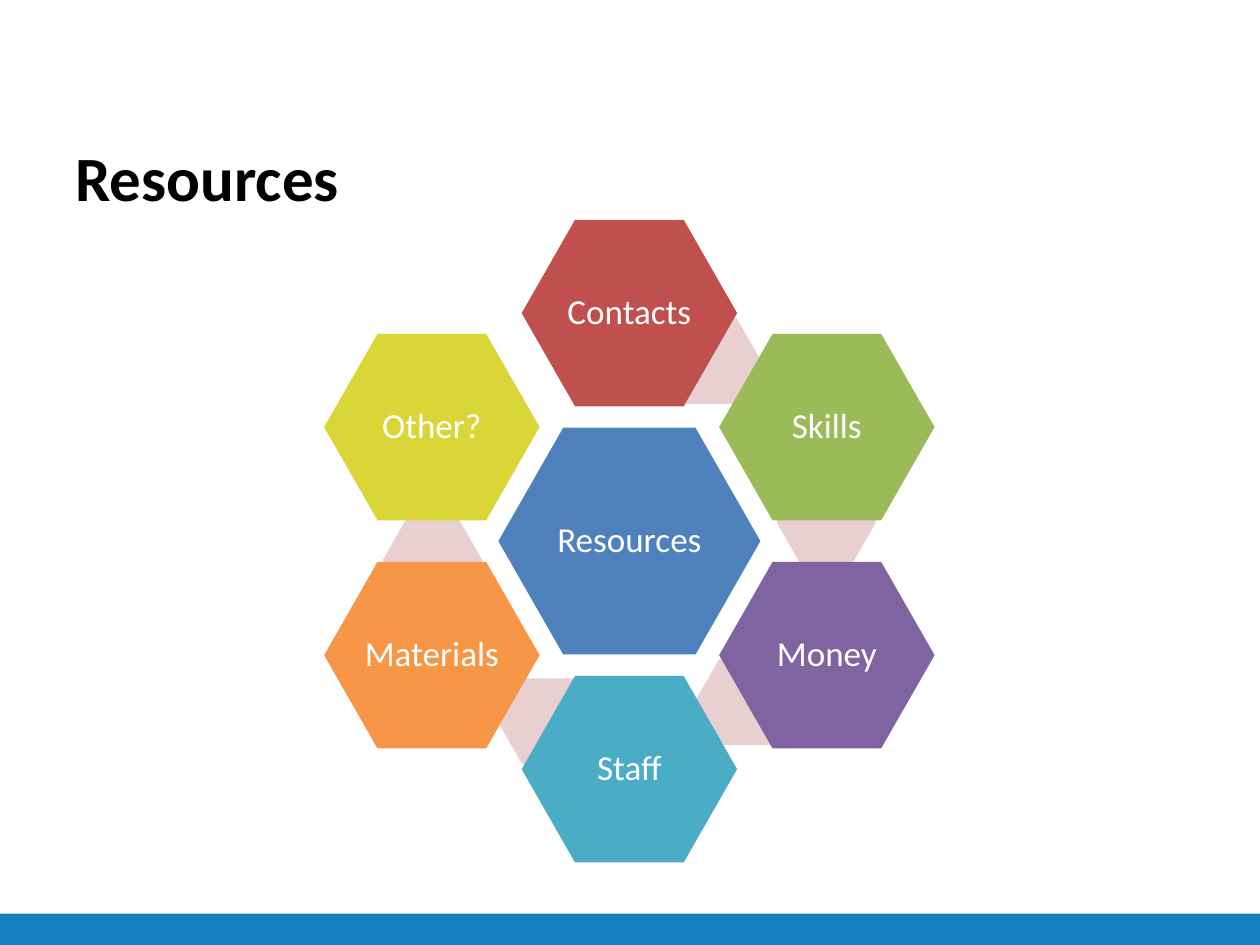
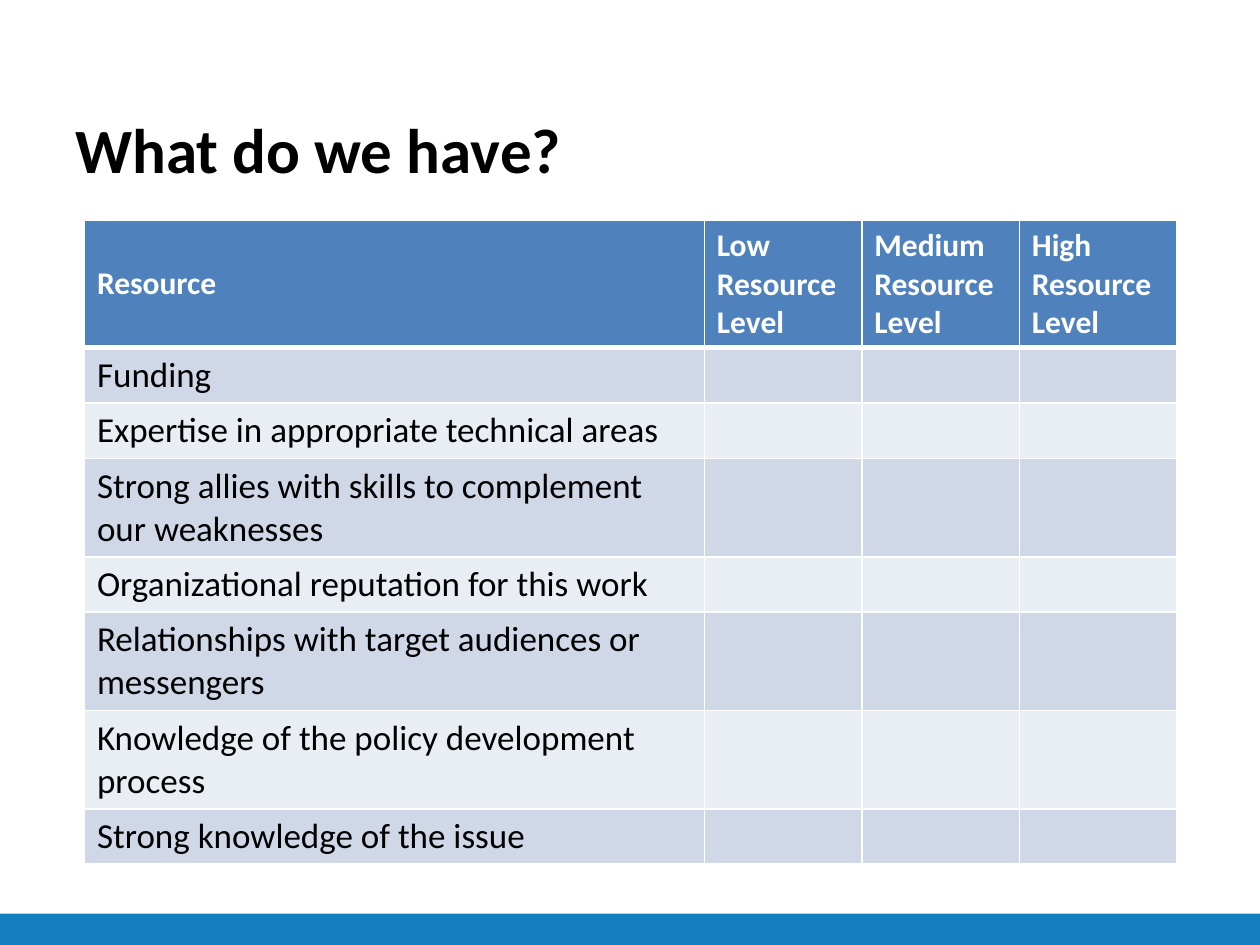
import math

import pptx
import pptx.dml.color
import pptx.enum.shapes
import pptx.enum.text
import pptx.oxml
import pptx.oxml.ns
import pptx.util

Inches = pptx.util.Inches
Pt = pptx.util.Pt
SHAPES = pptx.enum.shapes.MSO_SHAPE
ALIGN = pptx.enum.text.PP_ALIGN
ANCHOR = pptx.enum.text.MSO_ANCHOR

FONT = "Calibri"
WHITE, BLACK, BLUE = "FFFFFF", "000000", "4F81BD"
BAND_BLUE, LINK_PINK = "137FC1", "E8D0D0"
ROW_TINTS = ["D0D8E8", "E9EDF4"]

TITLE_STYLE = {"name": FONT, "size": Pt(36), "bold": True}
HEXAGON_STYLE = {"name": FONT, "size": Pt(20), "bold": False}
HEADER_STYLE = {"name": FONT, "size": Pt(18), "bold": True}
BODY_STYLE = {"name": FONT, "size": Pt(20), "bold": False}
HEXAGON_FRAME = {
    "word_wrap": True,
    "vertical_anchor": ANCHOR.MIDDLE,
    "margin_left": Inches(0.03),
    "margin_right": Inches(0.03),
    "margin_top": Inches(0.03),
    "margin_bottom": Inches(0.03),
}
TITLE_FRAME = {"word_wrap": True, "vertical_anchor": ANCHOR.TOP}

RESOURCE_KINDS = [
    ("Contacts", "C0504D"),
    ("Skills", "9BBB59"),
    ("Money", "8064A2"),
    ("Staff", "4BACC6"),
    ("Materials", "F79646"),
    ("Other?", "DAD638"),
]
LEVEL_HEADINGS = [
    "Resource",
    "Low\nResource Level",
    "Medium Resource Level",
    "High\nResource\vLevel",
]
RESOURCE_ROWS = [
    ("Funding", 0.44),
    ("Expertise in appropriate technical areas", 0.44),
    ("Strong allies with skills to complement our weaknesses", 0.78),
    ("Organizational reputation for this work", 0.44),
    ("Relationships with target audiences or messengers", 0.78),
    ("Knowledge of the policy development process", 0.78),
    ("Strong knowledge of the issue", 0.44),
]


def color(hex_code):
    """Turn a hex string into a colour."""
    return pptx.dml.color.RGBColor.from_string(hex_code)


def apply(target, values):
    """Set each named attribute on the target."""
    for name, value in values.items():
        setattr(target, name, value)


def paint(item, hex_code):
    """Give a shape or cell a solid fill."""
    item.fill.solid()
    item.fill.fore_color.rgb = color(hex_code)


def write(frame, text, style, hex_code):
    """Fill a text frame and format its runs."""
    frame.text = text
    for paragraph in frame.paragraphs:
        for run in paragraph.runs:
            apply(run.font, style)
            run.font.color.rgb = color(hex_code)


def add_flat_shape(slide, preset, left, top, width, height, hex_code):
    """Add a filled preset shape without line or shadow."""
    shape = slide.shapes.add_shape(
        preset, Inches(left), Inches(top), Inches(width), Inches(height))
    paint(shape, hex_code)
    shape.line.fill.background()
    shape.shadow.inherit = False
    return shape


def add_base_slide(deck, title, top, height):
    """Add a slide with its title and bottom band."""
    slide = deck.slides.add_slide(deck.slide_layouts[6])
    add_flat_shape(slide, SHAPES.RECTANGLE, 0, 7.25, 10, 0.25, BAND_BLUE)
    heading = slide.shapes.add_textbox(
        Inches(0.5), Inches(top), Inches(9), Inches(height))
    apply(heading.text_frame, TITLE_FRAME)
    write(heading.text_frame, title, TITLE_STYLE, BLACK)
    return slide


def add_hexagon(slide, center, width, height, hex_code, label=""):
    """Add a hexagon around a centre point, with an optional label."""
    x, y = center
    hexagon = add_flat_shape(
        slide, SHAPES.HEXAGON, x - width / 2, y - height / 2, width, height, hex_code)
    hexagon.adjustments[0] = 0.286
    if label:
        frame = hexagon.text_frame
        apply(frame, HEXAGON_FRAME)
        write(frame, label, HEXAGON_STYLE, WHITE)
        apply(frame.paragraphs[0], {"alignment": ALIGN.CENTER, "line_spacing": 0.9})


def add_resource_ring(slide, left, top, width, height):
    """Place six resource hexagons clockwise around the central one."""
    middle_x, middle_y = left + width / 2, top + height / 2
    step = 360 / len(RESOURCE_KINDS)

    def on_ring(radius, degrees):
        """Find a point on the ring, measured clockwise from the top."""
        angle = math.radians(degrees)
        return middle_x + radius * math.sin(angle), middle_y - radius * math.cos(angle)

    add_hexagon(slide, (middle_x, middle_y), 2.08, 1.8, BLUE, "Resources")
    for index in range(len(RESOURCE_KINDS) - 1):
        add_hexagon(slide, on_ring(1.57, index * step + 24.5), 0.79, 0.68, LINK_PINK)
    for index, (label, hex_code) in enumerate(RESOURCE_KINDS):
        add_hexagon(slide, on_ring(1.81, index * step), 1.71, 1.48, hex_code, label)


def add_border(cell, side, points):
    """Draw one white border of a cell."""
    cell._tc.get_or_add_tcPr().append(pptx.oxml.parse_xml(
        f'<a:{side} {pptx.oxml.ns.nsdecls("a")} w="{Pt(points)}">'
        f'<a:solidFill><a:srgbClr val="{WHITE}"/></a:solidFill></a:{side}>'))


def add_level_table(slide, left, top, width, level_width):
    """Add the table of resources against resource levels."""
    heights = [1.01] + [height for _, height in RESOURCE_ROWS]
    table = slide.shapes.add_table(
        len(heights), len(LEVEL_HEADINGS), Inches(left), Inches(top),
        Inches(width), Inches(sum(heights))).table
    level_count = len(LEVEL_HEADINGS) - 1
    column_widths = [width - level_count * level_width] + [level_width] * level_count
    for column, column_width in zip(table.columns, column_widths):
        column.width = Inches(column_width)
    blanks = [""] * level_count
    rows = [LEVEL_HEADINGS] + [[resource] + blanks for resource, _ in RESOURCE_ROWS]
    for row_index, (texts, height) in enumerate(zip(rows, heights)):
        table.rows[row_index].height = Inches(height)
        is_header = row_index == 0
        tint = BLUE if is_header else ROW_TINTS[(row_index - 1) % 2]
        style = HEADER_STYLE if is_header else BODY_STYLE
        borders = {"lnL": 1, "lnR": 1, "lnT": 3 if row_index == 1 else 1,
                   "lnB": 3 if is_header else 1}
        for column_index, text in enumerate(texts):
            cell = table.cell(row_index, column_index)
            for side, points in borders.items():
                add_border(cell, side, points)
            paint(cell, tint)
            write(cell.text_frame, text, style, WHITE if is_header else BLACK)
    table.cell(0, 0).vertical_anchor = ANCHOR.MIDDLE


def main():
    """Build and save the two slides."""
    deck = pptx.Presentation()
    apply(deck, {"slide_width": Inches(10), "slide_height": Inches(7.5)})
    ring_slide = add_base_slide(deck, "Resources", 1.05, 1.25)
    add_resource_ring(ring_slide, 2.57, 1.75, 4.85, 5.09)
    level_slide = add_base_slide(deck, "What do we have?", 0.83, 0.75)
    add_level_table(level_slide, 0.67, 1.75, 8.67, 1.25)
    deck.save("out.pptx")


if __name__ == "__main__":
    main()
